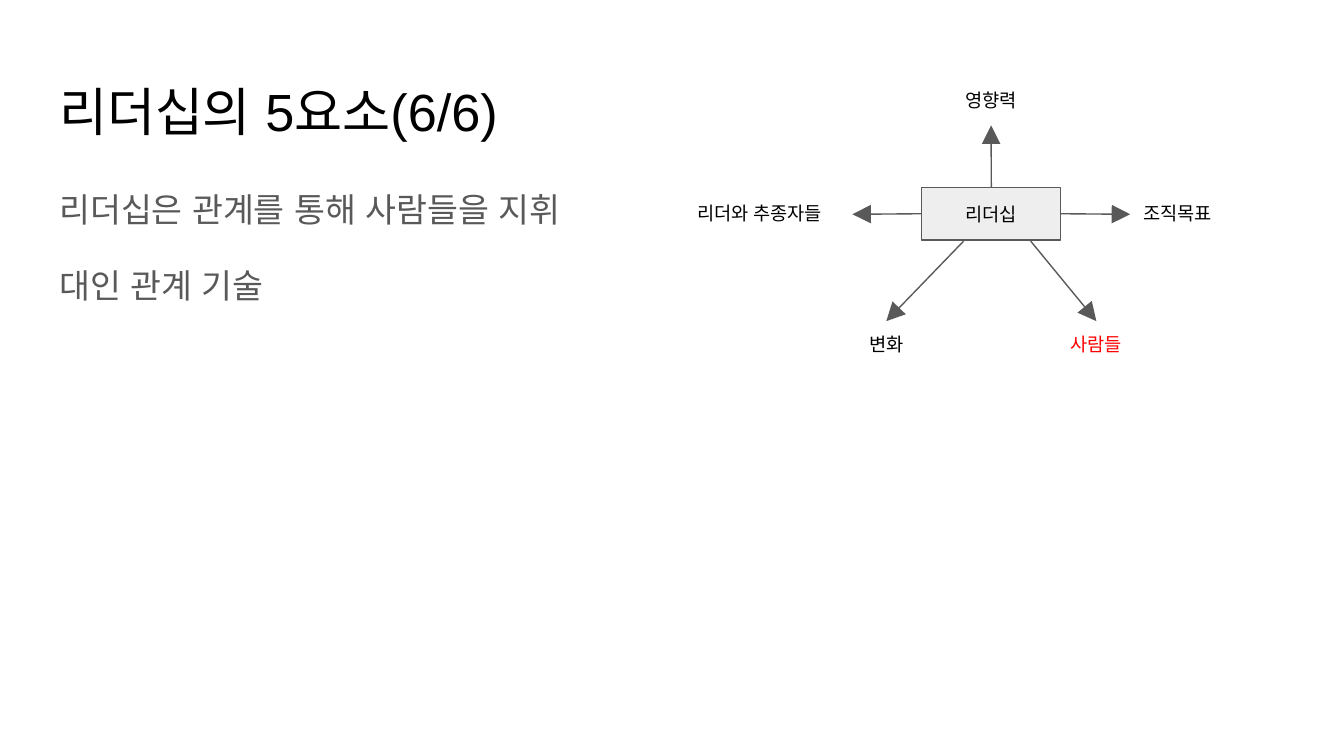
from lxml.etree import SubElement
from pptx import Presentation
from pptx.dml.color import RGBColor
from pptx.enum.shapes import MSO_CONNECTOR as Connector, MSO_SHAPE as Shape
from pptx.enum.text import MSO_ANCHOR as Anchor, PP_ALIGN as Align
from pptx.oxml.ns import qn
from pptx.util import Cm, Pt

BLACK = RGBColor(0x00, 0x00, 0x00)
GRAY = RGBColor(0x59, 0x59, 0x59)
LIGHT = RGBColor(0xEE, 0xEE, 0xEE)
RED = RGBColor(0xFF, 0x00, 0x00)
TOP, LEFT, BOTTOM, RIGHT = range(4)


class SlideBuilder:
    """Draws text, boxes and arrows on one slide in a shared style."""

    font = "Arial"
    line_width = Pt(0.75)
    inset = Cm(0.25)

    def __init__(self, slide):
        self.slide = slide

    def fill_text(self, shape, lines, size, color, align, anchor=Anchor.TOP):
        frame = shape.text_frame
        frame.text = "\n".join(lines)
        frame.word_wrap = True
        frame.vertical_anchor = anchor
        frame.margin_left = frame.margin_right = self.inset
        frame.margin_top = frame.margin_bottom = self.inset
        for paragraph in frame.paragraphs:
            paragraph.alignment = align
            for run in paragraph.runs:
                run.font.name = self.font
                run.font.size = Pt(size)
                run.font.color.rgb = color
                SubElement(run.font._element, qn("a:ea"), typeface=self.font)

    def text(self, lines, left, top, width, height, size, color=BLACK, align=Align.LEFT):
        shape = self.slide.shapes.add_textbox(Cm(left), Cm(top), Cm(width), Cm(height))
        self.fill_text(shape, lines, size, color, align)
        return shape

    def box(self, label, left, top, width, height):
        shape = self.slide.shapes.add_shape(
            Shape.RECTANGLE, Cm(left), Cm(top), Cm(width), Cm(height))
        shape.shadow.inherit = False
        shape.fill.solid()
        shape.fill.fore_color.rgb = LIGHT
        shape.line.color.rgb = GRAY
        shape.line.width = self.line_width
        self.fill_text(shape, [label], 10, BLACK, Align.CENTER, Anchor.MIDDLE)
        return shape

    def arrow(self, start, target, target_side):
        connector = self.slide.shapes.add_connector(Connector.STRAIGHT, *start, *start)
        connector.end_connect(target, target_side)
        connector.line.color.rgb = GRAY
        connector.line.width = self.line_width
        SubElement(connector.line._get_or_add_ln(), qn("a:tailEnd"),
                   type="triangle", w="lg", len="lg")
        SubElement(connector._element.spPr, qn("a:effectLst"))
        return connector


def main():
    presentation = Presentation()
    presentation.slide_width, presentation.slide_height = Cm(25.4), Cm(14.29)
    builder = SlideBuilder(presentation.slides.add_slide(presentation.slide_layouts[6]))

    builder.text(["리더십의 5요소(6/6)"], 0.87, 1.24, 23.67, 1.6, 28)
    body = builder.text(["리더십은 관계를 통해 사람들을 지휘", "대인 관계 기술"],
                        0.87, 3.2, 23.67, 9.5, 18, GRAY)
    for paragraph in body.text_frame.paragraphs:
        paragraph.line_spacing = 1.15
        paragraph.space_after = Pt(16)

    leadership = builder.box("리더십", 17.42, 3.54, 2.63, 1)
    elements = [
        ("영향력", 17.14, 1.47, BLACK, Align.CENTER, BOTTOM, TOP),
        ("리더와 추종자들", 12.93, 3.6, BLACK, Align.LEFT, RIGHT, LEFT),
        ("조직목표", 21.36, 3.6, BLACK, Align.LEFT, LEFT, RIGHT),
        ("변화", 15.16, 6.07, BLACK, Align.CENTER, TOP, (18.21, 4.56)),
        ("사람들", 19.13, 6.07, RED, Align.CENTER, TOP, (19.48, 4.56)),
    ]
    for name, left, top, color, align, side, origin in elements:
        label = builder.text([name], left, top, 3.18, 0.9, 10, color, align)
        if isinstance(origin, tuple):
            builder.arrow([Cm(value) for value in origin], label, side)
        else:
            arrow = builder.arrow((leadership.left, leadership.top), label, side)
            arrow.begin_connect(leadership, origin)

    presentation.save("out.pptx")


if __name__ == "__main__":
    main()
